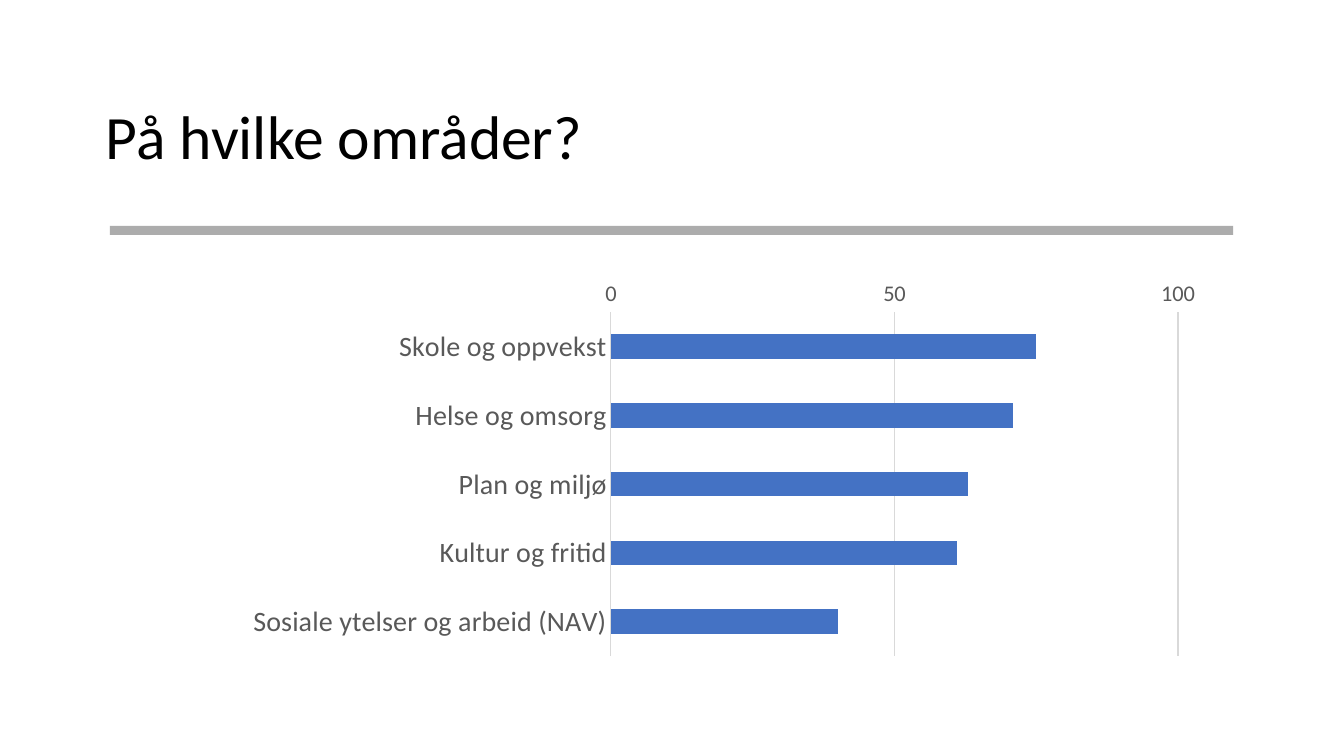
from lxml import etree
from pptx import Presentation
from pptx.chart.data import CategoryChartData
from pptx.dml.color import RGBColor
from pptx.enum import chart as charts, shapes, text
from pptx.oxml import ns
from pptx.util import Inches, Pt

COLORS = {
    "title": "000000",
    "rule": "808080",
    "label": "595959",
    "grid": "D9D9D9",
    "bar": "4472C4",
}
AREAS = {
    "Skole og oppvekst": 75,
    "Helse og omsorg": 71,
    "Plan og miljø": 63,
    "Kultur og fritid": 61,
    "Sosiale ytelser og arbeid (NAV)": 40,
}
LEFT, WIDTH = 1.09, 11.14


def set_font(font, *, size, color, name="Calibri"):
    font.name = name
    font.size = Pt(size)
    font.color.rgb = RGBColor.from_string(COLORS[color])


def set_plot_layout(chart, **fractions):
    """Pin the inner plot area at x, y, w, h as fractions of the chart."""
    plot_area = chart.element.find(".//" + ns.qn("c:plotArea"))
    for automatic in plot_area.findall(ns.qn("c:layout")):
        plot_area.remove(automatic)
    layout = etree.Element(ns.qn("c:layout"))
    manual = etree.SubElement(layout, ns.qn("c:manualLayout"))
    settings = {"layoutTarget": "inner", "xMode": "edge", "yMode": "edge", **fractions}
    for tag, value in settings.items():
        etree.SubElement(manual, ns.qn(f"c:{tag}")).set("val", str(value))
    plot_area.insert(0, layout)


class SlideBuilder:
    def __init__(self, presentation):
        self.slide = presentation.slides.add_slide(presentation.slide_layouts[6])

    def text(self, wording, box, *, size, color, line_spacing=0.9):
        frame = self.slide.shapes.add_textbox(*map(Inches, box)).text_frame
        frame.word_wrap = True
        frame.vertical_anchor = text.MSO_ANCHOR.MIDDLE
        paragraph = frame.paragraphs[0]
        paragraph.line_spacing = line_spacing
        run = paragraph.add_run()
        run.text = wording
        set_font(run.font, size=size, color=color)

    def bar(self, box, *, color, opacity):
        rule = self.slide.shapes.add_shape(
            shapes.MSO_SHAPE.RECTANGLE, *map(Inches, box))
        rule.shadow.inherit = False
        rule.line.fill.background()
        rule.fill.solid()
        rule.fill.fore_color.rgb = RGBColor.from_string(COLORS[color])
        fill_color = rule.element.spPr.find(".//" + ns.qn("a:srgbClr"))
        etree.SubElement(fill_color, ns.qn("a:alpha")).set("val", str(opacity * 1000))

    def bar_chart(self, values, box):
        data = CategoryChartData()
        data.categories = list(values)
        data.add_series("Series 1", list(values.values()))
        chart = self.slide.shapes.add_chart(
            charts.XL_CHART_TYPE.BAR_CLUSTERED, *map(Inches, box), data).chart
        chart.has_title = chart.has_legend = False
        set_font(chart.font, size=16, color="title")
        set_plot_layout(chart, x=0.446, y=0.123, w=0.505, h=0.862)

        plot = chart.plots[0]
        plot.gap_width = 182
        plot.vary_by_categories = False
        bars = plot.series[0].format.fill
        bars.solid()
        bars.fore_color.rgb = RGBColor.from_string(COLORS["bar"])

        area_axis, score_axis = chart.category_axis, chart.value_axis
        for axis, size in ((area_axis, 20), (score_axis, 16)):
            axis.major_tick_mark = axis.minor_tick_mark = charts.XL_TICK_MARK.NONE
            set_font(axis.tick_labels.font, size=size, color="label")
        area_axis.reverse_order = True
        score_axis.minimum_scale, score_axis.maximum_scale = 0, 100
        score_axis.major_unit = 50
        score_axis.has_major_gridlines = True
        score_axis.format.line.fill.background()
        for line in (area_axis.format.line, score_axis.major_gridlines.format.line):
            line.width = Pt(0.75)
            line.color.rgb = RGBColor.from_string(COLORS["grid"])


def main():
    presentation = Presentation()
    presentation.slide_width = Inches(13.33)
    presentation.slide_height = Inches(7.5)
    builder = SlideBuilder(presentation)
    builder.text("På hvilke områder?", (0.95, 0.66, 11.43, 1.45), size=44, color="title")
    builder.bar((LEFT, 2.24, WIDTH, 0.09), color="rule", opacity=65)
    builder.bar_chart(AREAS, (LEFT, 2.61, WIDTH, 3.96))
    presentation.save("out.pptx")


if __name__ == "__main__":
    main()
